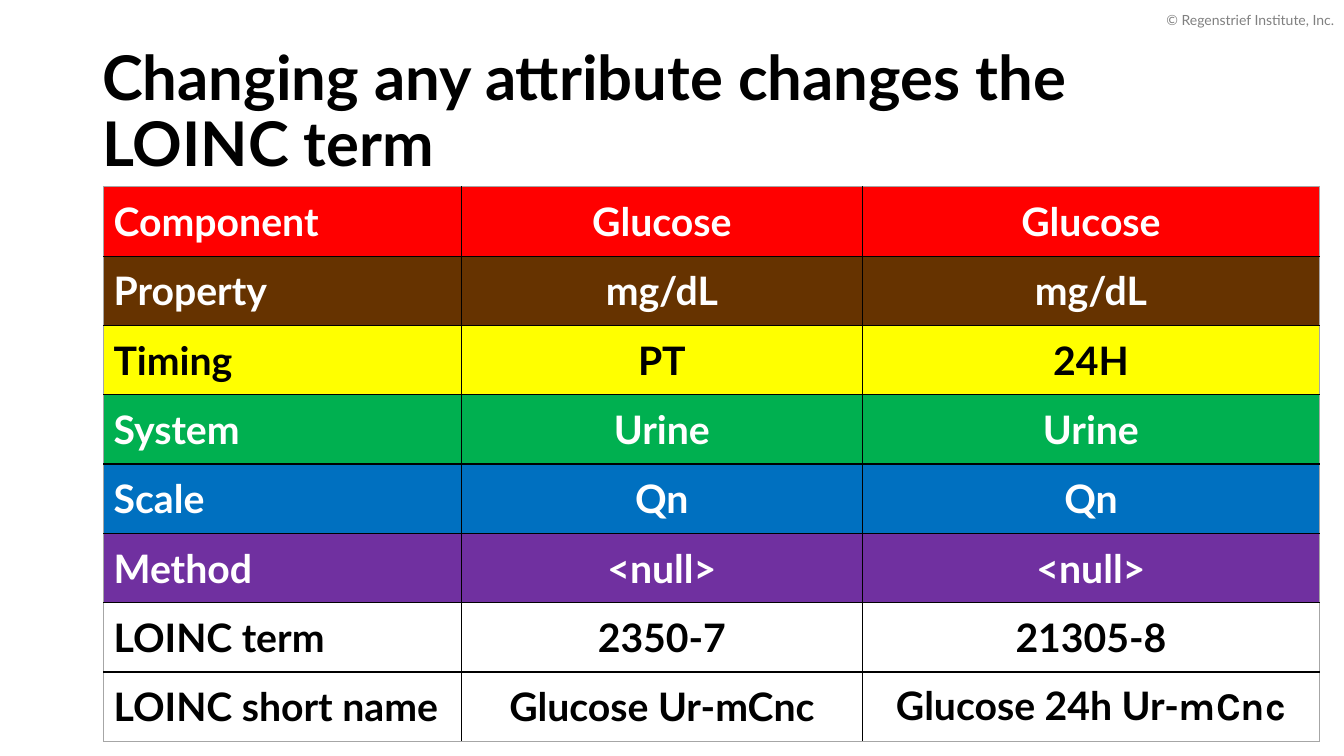
from lxml import etree
from pptx import Presentation
from pptx.dml.color import RGBColor
from pptx.enum.text import MSO_ANCHOR, PP_ALIGN
from pptx.oxml.ns import qn
from pptx.util import Pt

MIDDLE = MSO_ANCHOR.MIDDLE
LEFT, CENTER, RIGHT = PP_ALIGN.LEFT, PP_ALIGN.CENTER, PP_ALIGN.RIGHT

FONT, TAIL_FONT = "Lato", "Karla"
BLACK, WHITE, GREY, EDGE = "000000", "FFFFFF", "808080", "A6A6A6"

TITLE = "Changing any attribute changes the LOINC term"
NOTICE = "© Regenstrief Institute, Inc."
# fill, text colour, cells
ROWS = [
    ("FF0000", WHITE, ("Component", "Glucose", "Glucose")),
    ("663300", WHITE, ("Property", "mg/dL", "mg/dL")),
    ("FFFF00", BLACK, ("Timing", "PT", "24H")),
    ("00B050", WHITE, ("System", "Urine", "Urine")),
    ("0070C0", WHITE, ("Scale", "Qn", "Qn")),
    ("7030A0", WHITE, ("Method", "<null>", "<null>")),
    (None, BLACK, ("LOINC term", "2350-7", "21305-8")),
    (None, BLACK, ("LOINC short name", "Glucose Ur-mCnc", "Glucose 24h Ur-")),
]
TAIL = "mCnc"  # ends the last cell in its own font
WIDTHS = (255.5, 286.5, 326.5)
ROW_H = 49.5


def rgb(code):
    return RGBColor.from_string(code)


def style(para, size, color, bold=False, align=LEFT):
    para.alignment = align
    font = para.font
    font.name, font.size, font.bold = FONT, Pt(size), bold
    font.color.rgb = rgb(color)


def add_text(slide, box, text, size, color, bold=False, align=LEFT, space=1.0):
    frame = slide.shapes.add_textbox(*map(Pt, box)).text_frame
    frame.word_wrap = True
    frame.vertical_anchor = MIDDLE
    para = frame.paragraphs[0]
    para.text = text
    para.line_spacing = space
    style(para, size, color, bold, align)


def add_border(cell, outer):
    """Line all four sides: grey on the sides in outer, black elsewhere."""
    props = cell._tc.get_or_add_tcPr()
    for side in "LRTB":
        width = 0.75 if side in outer else 1
        line = etree.SubElement(props, qn(f"a:ln{side}"), w=str(Pt(width)))
        fill = etree.SubElement(line, qn("a:solidFill"))
        color = EDGE if side in outer else BLACK
        etree.SubElement(fill, qn("a:srgbClr"), val=color)


def add_grid(slide, left, top):
    rows, cols = len(ROWS), len(WIDTHS)
    box = (left, top, sum(WIDTHS), ROW_H * rows)
    table = slide.shapes.add_table(rows, cols, *map(Pt, box)).table
    table.first_row = table.horz_banding = False
    for col, width in zip(table.columns, WIDTHS):
        col.width = Pt(width)
    for r, (fill, color, texts) in enumerate(ROWS):
        table.rows[r].height = Pt(ROW_H)
        for c, text in enumerate(texts):
            cell = table.cell(r, c)
            ends = {"L": c == 0, "R": c == cols - 1,
                    "T": r == 0, "B": r == rows - 1}
            add_border(cell, [side for side in ends if ends[side]])
            if fill:
                cell.fill.solid()
                cell.fill.fore_color.rgb = rgb(fill)
            else:
                cell.fill.background()
            cell.vertical_anchor = MIDDLE
            para = cell.text_frame.paragraphs[0]
            para.text = text
            style(para, 28, color, True, CENTER if c else LEFT)
    tail = para.add_run()
    tail.text = TAIL
    tail.font.name = TAIL_FONT


def main():
    deck = Presentation()
    deck.slide_width, deck.slide_height = Pt(960), Pt(540)
    slide = deck.slides.add_slide(deck.slide_layouts[6])
    add_grid(slide, 74, 133.5)
    add_text(slide, (66, 28.75, 828, 104.5), TITLE, 44, BLACK, True, space=0.9)
    add_text(slide, (744, 0, 216, 28.75), NOTICE, 10, GREY, align=RIGHT)
    deck.save("out.pptx")


if __name__ == "__main__":
    main()
